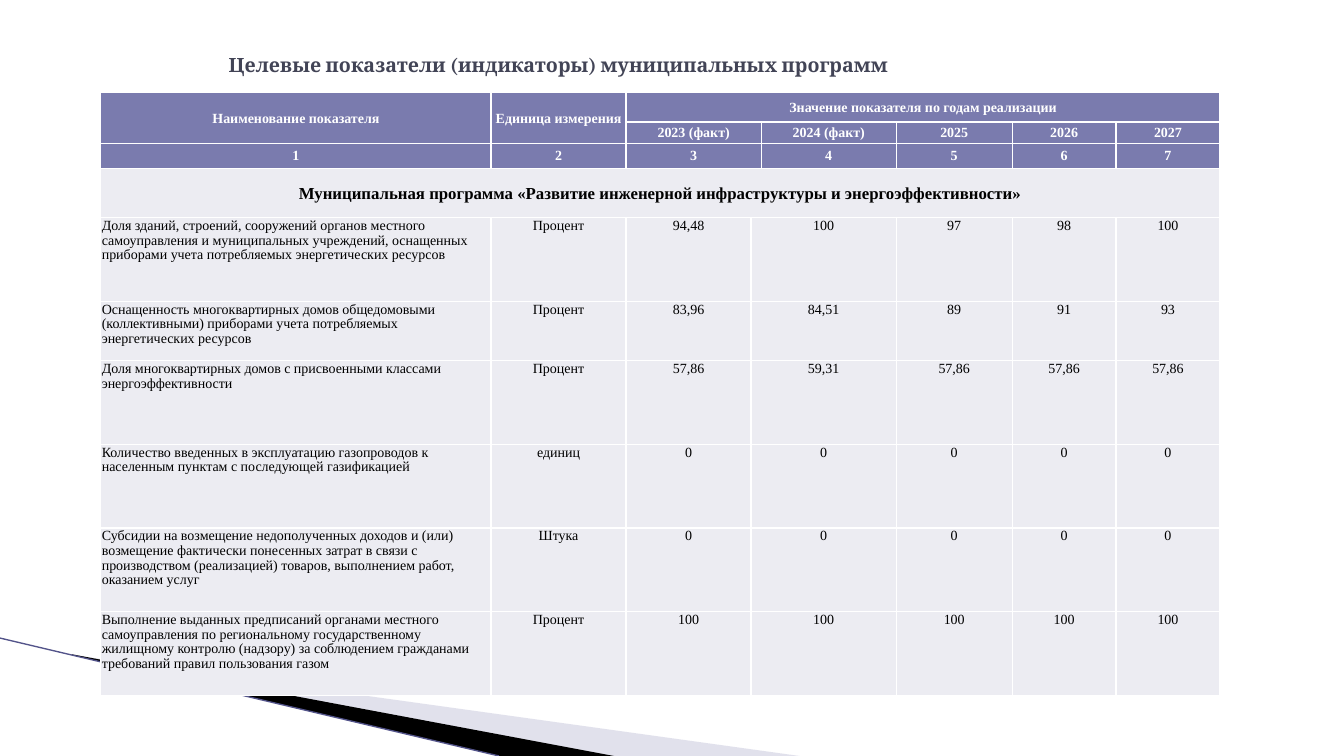
"""Builds a slide with the target indicators of a municipal programme."""
from lxml import etree
from pptx import Presentation
from pptx.dml.color import RGBColor
from pptx.enum.shapes import MSO_CONNECTOR
from pptx.enum.text import MSO_ANCHOR, PP_ALIGN
from pptx.oxml.ns import qn
from pptx.util import Inches, Pt

LEFT, CENTER = PP_ALIGN.LEFT, PP_ALIGN.CENTER
TOP, MIDDLE = MSO_ANCHOR.TOP, MSO_ANCHOR.MIDDLE
STRAIGHT = MSO_CONNECTOR.STRAIGHT
SLIDE_W, SLIDE_H = 13.33, 7.5
TABLE_FONT = "Times New Roman"
HEADER_ROWS, PROGRAMME_ROW = 3, 3


def rgb(code):
    return RGBColor.from_string(code)


def style_run(run, font, size, color, bold):
    run.font.name = font
    run.font.size = Pt(size)
    run.font.color.rgb = rgb(color)
    run.font.bold = bold


prs = Presentation()
prs.slide_width, prs.slide_height = Inches(SLIDE_W), Inches(SLIDE_H)
slide = prs.slides.add_slide(prs.slide_layouts[6])

wedges = [
    ([(0.73, 6.5), (7.93, SLIDE_H), (6.08, SLIDE_H)], "B6B6D1", 40),
    ([(0.71, 6.49), (6.09, SLIDE_H), (4.96, SLIDE_H), (0.72, 6.5)], "000000", 100),
]
for corners, color, opacity in wedges:
    points = [(Inches(x), Inches(y)) for x, y in corners]
    builder = slide.shapes.build_freeform(*points[0])
    builder.add_line_segments(points[1:])
    wedge = builder.convert_to_shape()
    wedge.shadow.inherit = False
    wedge.line.fill.background()
    wedge.fill.solid()
    wedge.fill.fore_color.rgb = rgb(color)
    if opacity < 100:
        tint = wedge.fill._xPr.find(".//" + qn("a:srgbClr"))
        etree.SubElement(tint, qn("a:alpha"), val=str(opacity * 1000))

edge = slide.shapes.add_connector(
    STRAIGHT, 0, Inches(6.33), Inches(4.95), Inches(SLIDE_H))
edge.line.color.rgb = rgb("53548A")
edge.line.width = Pt(0.95)
etree.SubElement(edge._element.spPr, qn("a:effectLst"))

title = slide.shapes.add_textbox(Inches(2.17), Inches(0.3), Inches(9), Inches(0.69))
title.text_frame.word_wrap = True
title.text_frame.vertical_anchor = MIDDLE
title.text_frame.text = "Целевые показатели (индикаторы) муниципальных программ"
style_run(title.text_frame.paragraphs[0].runs[0], "Cambria", 14, "424456", True)

col_widths = [3.87, 1.34, 1.24, 0.1, 1.34, 1.15, 1.03, 1.03]
row_heights = [0.29, 0.21, 0.25, 0.49, 0.83, 0.59] + [0.83] * 4
header = [
    ["Наименование показателя", "Единица измерения",
     "Значение показателя по годам реализации"],
    ["", "", "2023 (факт)", "", "2024 (факт)", "2025", "2026", "2027"],
    ["1", "2", "3", "", "4", "5", "6", "7"],
    ["Муниципальная программа «Развитие инженерной инфраструктуры "
     "и энергоэффективности»"],
]
indicators = [
    ("Доля зданий, строений, сооружений органов местного самоуправления и "
     "муниципальных учреждений, оснащенных приборами учета потребляемых "
     "энергетических ресурсов",
     "Процент", ["94,48", "100", "97", "98", "100"]),
    ("Оснащенность многоквартирных домов общедомовыми (коллективными) "
     "приборами учета потребляемых энергетических ресурсов",
     "Процент", ["83,96", "84,51", "89", "91", "93"]),
    ("Доля многоквартирных домов с присвоенными классами энергоэффективности",
     "Процент", ["57,86", "59,31", "57,86", "57,86", "57,86"]),
    ("Количество введенных в эксплуатацию газопроводов к населенным пунктам "
     "с последующей газификацией",
     "единиц", ["0"] * 5),
    ("Субсидии на возмещение недополученных доходов и (или) возмещение "
     "фактически понесенных затрат в связи с производством (реализацией) "
     "товаров, выполнением работ, оказанием услуг",
     "Штука", ["0"] * 5),
    ("Выполнение выданных предписаний органами местного самоуправления по "
     "региональному государственному жилищному контролю (надзору) за "
     "соблюдением гражданами требований правил пользования газом",
     "Процент", ["100"] * 5),
]
rows = header + [[name, unit, values[0], values[1], "", *values[2:]]
                 for name, unit, values in indicators]

table = slide.shapes.add_table(
    len(rows), len(col_widths), Inches(1), Inches(0.92),
    Inches(sum(col_widths)), Inches(sum(row_heights))).table
for column, width in zip(table.columns, col_widths):
    column.width = Inches(width)
for row, height in zip(table.rows, row_heights):
    row.height = Inches(height)

merges = [(0, 0, 1, 0), (0, 1, 1, 1), (0, 2, 0, 7), (1, 2, 1, 3), (2, 2, 2, 3),
          (PROGRAMME_ROW, 0, PROGRAMME_ROW, 7)]
merges += [(r, 3, r, 4) for r in range(PROGRAMME_ROW + 1, len(rows))]
for first_row, first_col, last_row, last_col in merges:
    table.cell(first_row, first_col).merge(table.cell(last_row, last_col))

for r, texts in enumerate(rows):
    is_header, is_indicator = r < HEADER_ROWS, r > PROGRAMME_ROW
    for c in range(len(col_widths)):
        cell = table.cell(r, c)
        for side in ("a:lnL", "a:lnR", "a:lnT", "a:lnB"):
            border = etree.SubElement(
                cell._tc.get_or_add_tcPr(), qn(side), w=str(Pt(1)))
            paint = etree.SubElement(border, qn("a:solidFill"))
            etree.SubElement(paint, qn("a:srgbClr"), val="FFFFFF")
        cell.fill.solid()
        cell.fill.fore_color.rgb = rgb("7A7BAE" if is_header else "ECECF2")
        cell.margin_left = cell.margin_right = cell.margin_top = Inches(0.01)
        cell.margin_bottom = 0
        cell.vertical_anchor = TOP if is_indicator else MIDDLE
        if c >= len(texts) or not texts[c]:
            continue
        cell.text_frame.text = texts[c]
        paragraph = cell.text_frame.paragraphs[0]
        paragraph.alignment = LEFT if is_indicator and c == 0 else CENTER
        if is_indicator:
            paragraph.line_spacing = 0.95
        style_run(paragraph.runs[0], TABLE_FONT, 12 if r == PROGRAMME_ROW else 10,
                  "FFFFFF" if is_header else "000000", not is_indicator)

prs.save("out.pptx")
